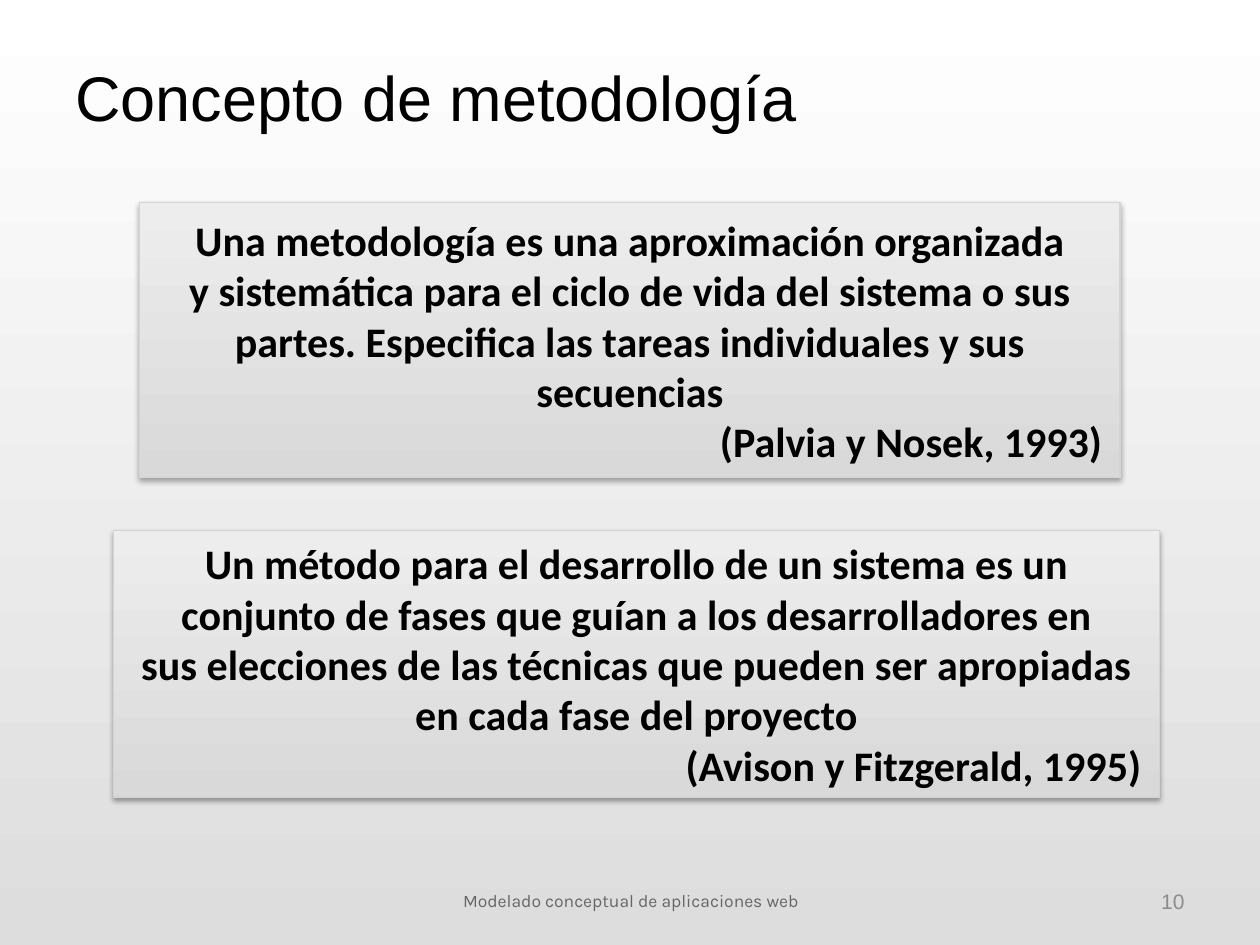
from lxml.etree import SubElement
from pptx import Presentation
from pptx.dml.color import RGBColor
from pptx.enum.shapes import MSO_SHAPE
from pptx.enum.text import MSO_ANCHOR, PP_ALIGN
from pptx.oxml.ns import qn
from pptx.util import Cm, Pt

BLACK = RGBColor(0x00, 0x00, 0x00)
WHITE = RGBColor(0xFF, 0xFF, 0xFF)
BACKDROP = RGBColor(0xDD, 0xDD, 0xDD)
BOX_DARK = RGBColor(0xD9, 0xD9, 0xD9)
BOX_LIGHT = RGBColor(0xED, 0xED, 0xED)
BOX_LINE = RGBColor(0xD4, 0xD4, 0xD4)
FOOTER_GRAY = RGBColor(0x66, 0x66, 0x66)
NUMBER_GRAY = RGBColor(0x8C, 0x8C, 0x8C)


class SlideBuilder:
    def __init__(self, slide):
        self.s = slide

    def gradient(self, fill, start, end, angle):
        fill.gradient()
        fill.gradient_angle = angle
        for stop, color in zip(fill.gradient_stops, (start, end)):
            stop.color.rgb = color

    def background(self):
        self.gradient(self.s.background.fill, WHITE, BACKDROP, 270)

    def set_text(self, p, text, font, size, color, align, bold=False):
        p.text = text
        p.alignment = align
        for r in p.runs:
            r.font.name = font
            r.font.size = Pt(size)
            r.font.bold = bold
            r.font.color.rgb = color

    def label(self, x, y, w, h, text, font, size, color, align=PP_ALIGN.LEFT):
        tf = self.s.shapes.add_textbox(Cm(x), Cm(y), Cm(w), Cm(h)).text_frame
        tf.word_wrap = True
        tf.vertical_anchor = MSO_ANCHOR.MIDDLE
        self.set_text(tf.paragraphs[0], text, font, size, color, align)

    def shadow(self, sp):
        sp.shadow.inherit = False
        effects = sp._element.spPr.find(qn("a:effectLst"))
        outer = SubElement(effects, qn("a:outerShdw"), blurRad=str(Pt(3.1)),
                           dist=str(Pt(1.8)), dir="5400000", rotWithShape="0")
        color = SubElement(outer, qn("a:srgbClr"), val=str(BLACK))
        SubElement(color, qn("a:alpha"), val="35000")

    def quote(self, x, y, w, h, text, author):
        sp = self.s.shapes.add_shape(MSO_SHAPE.RECTANGLE, Cm(x), Cm(y), Cm(w), Cm(h))
        self.gradient(sp.fill, BOX_DARK, BOX_LIGHT, 90)
        sp.line.color.rgb = BOX_LINE
        sp.line.width = Pt(0.75)
        self.shadow(sp)
        tf = sp.text_frame
        tf.word_wrap = True
        tf.vertical_anchor = MSO_ANCHOR.MIDDLE
        tf.margin_left = tf.margin_right = Cm(0.36)
        self.set_text(tf.paragraphs[0], text, "Calibri", 24, BLACK, PP_ALIGN.CENTER, True)
        self.set_text(tf.add_paragraph(), author, "Calibri", 24, BLACK, PP_ALIGN.RIGHT, True)


def main():
    prs = Presentation()
    prs.slide_width, prs.slide_height = Cm(25.4), Cm(19.05)
    b = SlideBuilder(prs.slides.add_slide(prs.slide_layouts[6]))
    b.background()

    # Title
    b.label(1.27, 0.36, 16.33, 3.18, "Concepto de metodología", "Arial", 36, BLACK)

    # Definitions
    b.quote(2.82, 4.09, 19.76, 5.54,
            "Una metodología es una aproximación organizada\n"
            "y sistemática para el ciclo de vida del sistema o sus\n"
            "partes. Especifica las tareas individuales y sus secuencias",
            "(Palvia y Nosek, 1993)")
    b.quote(2.29, 10.69, 21.08, 5.38,
            "Un método para el desarrollo de un sistema es un\n"
            "conjunto de fases que guían a los desarrolladores en\n"
            "sus elecciones de las técnicas que pueden ser apropiadas\n"
            "en cada fase del proyecto",
            "(Avison y Fitzgerald, 1995)")

    # Footer and slide number
    b.label(8.69, 17.65, 8.05, 1.02, "Modelado conceptual de aplicaciones web",
            "Karla", 10, FOOTER_GRAY, PP_ALIGN.CENTER)
    b.label(18.21, 17.65, 5.92, 1.02, "10", "Arial", 12, NUMBER_GRAY, PP_ALIGN.RIGHT)

    prs.save("out.pptx")


if __name__ == "__main__":
    main()
